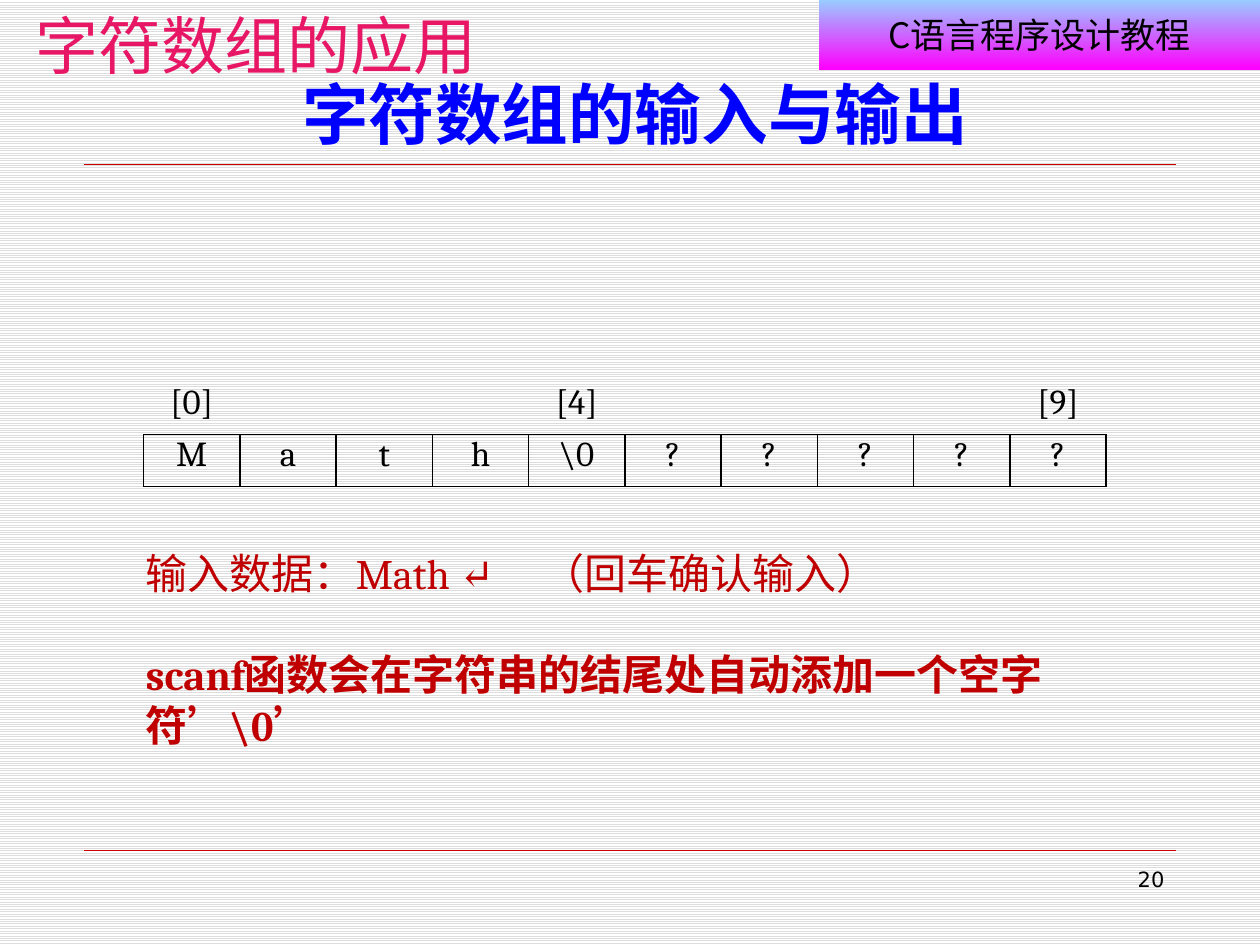
import pptx
import pptx.util
import pptx.dml.color
import pptx.enum.dml
import pptx.enum.shapes
import pptx.enum.text
import pptx.oxml
import pptx.oxml.ns

Inches, Pt = pptx.util.Inches, pptx.util.Pt
ALIGN = pptx.enum.text.PP_ALIGN
ANCHOR = pptx.enum.text.MSO_ANCHOR

WIDTH, HEIGHT = 10, 7.5
MARGIN = WIDTH / 15
SANS, SERIF, CHINESE = "DejaVu Sans", "Cambria", "Noto Sans CJK SC"
NO_STYLE = "{2D5ABB26-0587-4C30-8999-92F81FD0307C}"

COURSE = "C语言程序设计教程"
CHAPTER = "字符数组的应用"
TITLE = "字符数组的输入与输出"
PAGE = "20"
INDEX_LABELS = ["[0]", "", "", "", "[4]", "", "", "", "", "[9]"]
CHARACTERS = ["M", "a", "t", "h", "\\0", "?", "?", "?", "?", "?"]
INPUT_LINE = "输入数据：Math ↵\t（回车确认输入）"
RULE_LINE = "scanf函数会在字符串的结尾处自动添加一个空字符’\\0’"

COLUMN_WIDTH, ROW_HEIGHT = 0.764, 0.41
TABLE_LEFT, TABLE_TOP = 1.14, 3.04


def color(value):
    return pptx.dml.color.RGBColor.from_string(value)


def add_xml(parent, markup):
    """Append one DrawingML element, written with the prefix a:, to parent."""
    namespace = pptx.oxml.ns.nsdecls("a")
    parent.append(pptx.oxml.parse_xml(f"<a:wrap {namespace}>{markup}</a:wrap>")[0])


def write(paragraph, text, size=20, font=SERIF, fill="000000", bold=False,
          align=ALIGN.CENTER):
    paragraph.alignment = align
    run = paragraph.add_run()
    run.text = text
    run.font.size = Pt(size)
    run.font.name = font
    run.font.bold = bold
    run.font.color.rgb = color(fill)
    add_xml(run.font._element, f'<a:ea typeface="{CHINESE}"/>')


def add_text_box(slide, left, top, width, height):
    box = slide.shapes.add_textbox(*map(Inches, (left, top, width, height)))
    box.text_frame.word_wrap = True
    return box.text_frame


def add_rule(slide, top):
    rule = slide.shapes.add_connector(
        pptx.enum.shapes.MSO_CONNECTOR.STRAIGHT, Inches(MARGIN), Inches(top),
        Inches(WIDTH - MARGIN), Inches(top))
    rule.line.color.rgb = color("CC0000")
    rule.line.width = Pt(0.25)
    add_xml(rule._element.spPr, "<a:effectLst/>")


def add_header(slide):
    banner = slide.shapes.add_shape(
        pptx.enum.shapes.MSO_SHAPE.RECTANGLE, Inches(6.5), 0,
        Inches(WIDTH - 6.5), Inches(0.55))
    banner.shadow.inherit = False
    banner.line.fill.background()
    banner.fill.gradient()
    banner.fill.gradient_angle = 270
    for stop, value, position in zip(banner.fill.gradient_stops,
                                     ("99CCFF", "FF00FF"), (0, 1)):
        stop.color.rgb = color(value)
        stop.position = position
    banner.text_frame.vertical_anchor = ANCHOR.MIDDLE
    write(banner.text_frame.paragraphs[0], COURSE, font=CHINESE)

    chapter = add_text_box(slide, 0.2, 0, 3.66, 0.41)
    chapter.margin_left = chapter.margin_right = 0
    chapter.word_wrap = False
    write(chapter.paragraphs[0], CHAPTER, size=36, font="Noto Sans CJK JP",
          fill="E81766")


def set_borders(cell):
    for side in ("lnL", "lnR", "lnT", "lnB"):
        add_xml(cell._tc.get_or_add_tcPr(),
                f'<a:{side} w="12700"><a:solidFill><a:srgbClr val="000000"/>'
                f'</a:solidFill></a:{side}>')


def add_array_table(slide):
    rows = [INDEX_LABELS, CHARACTERS]
    columns = len(CHARACTERS)
    table = slide.shapes.add_table(
        len(rows), columns, Inches(TABLE_LEFT), Inches(TABLE_TOP),
        Inches(columns * COLUMN_WIDTH), Inches(len(rows) * ROW_HEIGHT)).table
    table.first_row = table.horz_banding = False
    table._tbl.tblPr.find(pptx.oxml.ns.qn("a:tableStyleId")).text = NO_STYLE
    for row_index, texts in enumerate(rows):
        for column_index, text in enumerate(texts):
            cell = table.cell(row_index, column_index)
            cell.margin_left = cell.margin_right = Inches(0.08)
            cell.margin_top = cell.margin_bottom = 0
            if row_index == 1:
                set_borders(cell)
            cell.fill.background()
            if text:
                write(cell.text_frame.paragraphs[0], text)


def add_explanation(slide):
    frame = add_text_box(slide, 1.06, 4.3, 8.35, 1.3)
    first, second = frame.paragraphs[0], frame.add_paragraph()
    add_xml(first._p.get_or_add_pPr(),
            f'<a:tabLst><a:tab pos="{Inches(3.15)}" algn="l"/></a:tabLst>')
    second.space_before = Pt(28.8)
    for paragraph, text, bold in ((first, INPUT_LINE, False),
                                  (second, RULE_LINE, True)):
        paragraph.line_spacing = Pt(28.8)
        write(paragraph, text, size=24, fill="C00000", bold=bold,
              align=ALIGN.LEFT)


def main():
    presentation = pptx.Presentation()
    presentation.slide_width = Inches(WIDTH)
    presentation.slide_height = Inches(HEIGHT)
    slide = presentation.slides.add_slide(presentation.slide_layouts[5])

    background = slide.background.fill
    background.patterned()
    background.pattern = pptx.enum.dml.MSO_PATTERN.LIGHT_HORIZONTAL
    background.fore_color.rgb = color("DDDDDD")
    background.back_color.rgb = color("FFFFFF")

    add_rule(slide, 6.75)
    add_header(slide)
    add_rule(slide, 1.3)

    title = slide.shapes.title
    title.left, title.top, title.width, title.height = map(
        Inches, (MARGIN, 0.52, 8.75, 0.74))
    title.text_frame.vertical_anchor = ANCHOR.BOTTOM
    write(title.text_frame.paragraphs[0], TITLE, size=38, font=SANS,
          fill="0000FF", bold=True)

    add_array_table(slide)
    page = add_text_box(slide, 7.17, 6.83, 2.17, 0.52)
    write(page.paragraphs[0], PAGE, size=12, font=SANS, align=ALIGN.RIGHT)
    add_explanation(slide)
    presentation.save("out.pptx")


if __name__ == "__main__":
    main()
